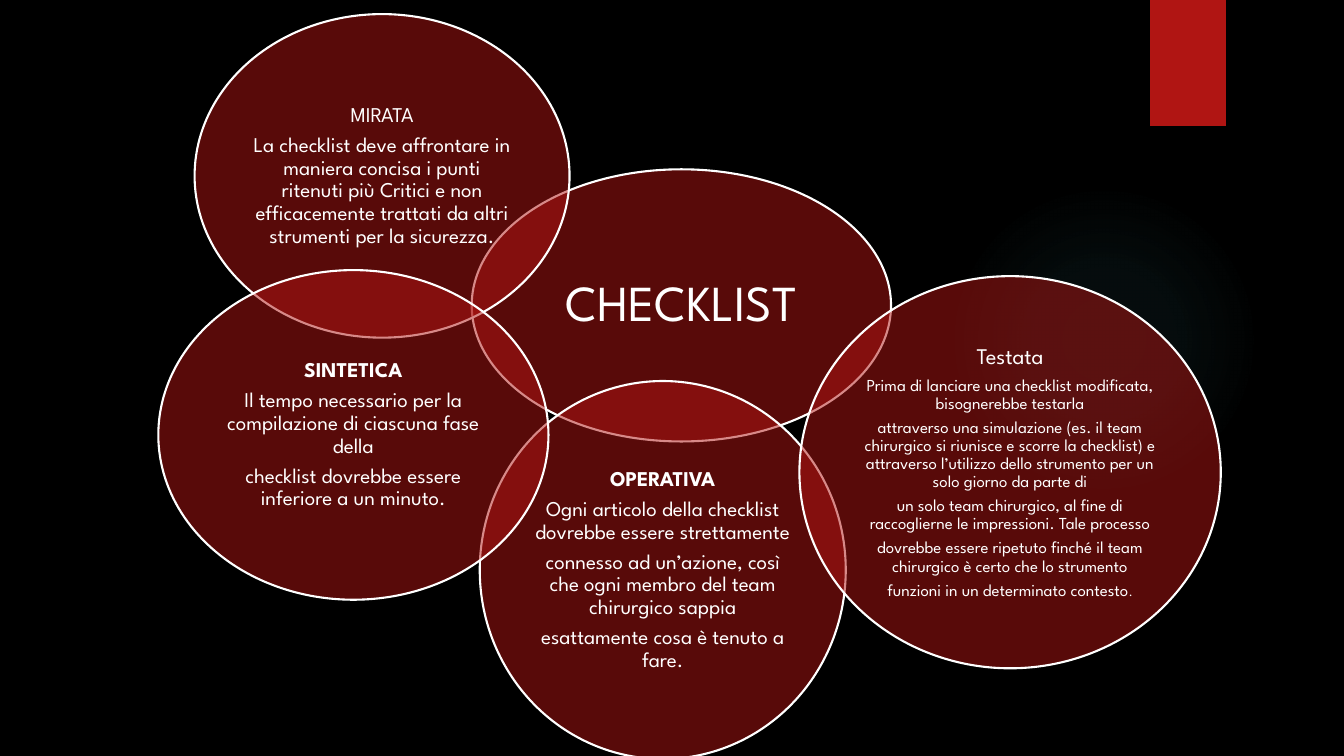
import dataclasses

import lxml.etree
import pptx
import pptx.dml.color
import pptx.enum.shapes
import pptx.enum.text
import pptx.oxml.ns
import pptx.util


@dataclasses.dataclass(frozen=True)
class Theme:
    font: str = "League Spartan"
    background: str = "000000"
    accent: str = "B01513"
    glow: str = "50B9C1"
    ink: str = "FFFFFF"
    title: float = 36
    body: float = 15
    heading: float = 16
    small: float = 12
    tiny: float = 9
    spacer: float = 22


THEME = Theme()
OVAL = pptx.enum.shapes.MSO_SHAPE.OVAL
RECTANGLE = pptx.enum.shapes.MSO_SHAPE.RECTANGLE
GLOW_STOPS = [(0, 7), (36, 6), (69, 0)]

GLOW_BOX = (70.58, 24.4, 23.1, 41.07)
TAB_BOX = (85.58, 0, 5.63, 16.67)

CIRCLES = [
    ((35.1, 22.4, 31.2, 36), [
        [("CHECKLIST", THEME.title, False)],
    ]),
    ((14.48, 1.87, 27.9, 42.8), [
        [("MIRATA", THEME.body, False)],
        [("La checklist deve affrontare in maniera concisa i punti ritenuti più Critici "
          "e non efficacemente trattati da altri strumenti per la sicurezza.", THEME.body, False)],
    ]),
    ((35.7, 50.4, 27.23, 50), [
        [("OPERATIVA", THEME.body, True)],
        [("Ogni articolo della checklist dovrebbe essere strettamente", THEME.body, False)],
        [("connesso ad un’azione, così che ogni membro del team chirurgico sappia",
          THEME.body, False)],
        [("esattamente cosa è tenuto a fare.", THEME.body, False)],
    ]),
    ((59.48, 36.53, 31.35, 51.87), [
        [("Testata", THEME.heading, False)],
        [("Prima di lanciare una checklist modificata, bisognerebbe testarla",
          THEME.small, False)],
        [("attraverso una simulazione (es. il team chirurgico si riunisce e scorre la checklist) "
          "e attraverso l’utilizzo dello strumento per un solo giorno da parte di",
          THEME.small, False)],
        [("un solo team chirurgico, al fine di raccoglierne le impressioni. Tale processo",
          THEME.small, False)],
        [("dovrebbe essere ripetuto finché il team chirurgico è certo che lo strumento",
          THEME.small, False)],
        [("funzioni in un determinato contesto", THEME.small, False), (".", THEME.tiny, False)],
    ]),
    ((11.78, 35.73, 29.03, 43.6), [
        [("SINTETICA", THEME.body, True)],
        [("Il tempo necessario per la compilazione di ciascuna fase della", THEME.body, False)],
        [("checklist dovrebbe essere inferiore a un minuto.", THEME.body, False)],
    ]),
]


def color(value):
    return pptx.dml.color.RGBColor.from_string(value)


def apply(target, values):
    for name, value in values.items():
        setattr(target, name, value)


def add_node(parent, tag, **attributes):
    return lxml.etree.SubElement(parent, pptx.oxml.ns.qn(tag), attributes)


def set_alpha(node, percent):
    add_node(node, "a:alpha", val=str(percent * 1000))


def add_shape(page, area, kind, box):
    width, height = area
    left, top, across, down = box
    shape = page.shapes.add_shape(
        kind, int(width * left / 100), int(height * top / 100),
        int(width * across / 100), int(height * down / 100))
    shape.shadow.inherit = False
    shape.fill.solid()
    shape.fill.fore_color.rgb = color(THEME.accent)
    shape.line.fill.background()
    return shape


def add_glow(page, area, box):
    shape = add_shape(page, area, OVAL, box)
    solid = shape.element.spPr.find(pptx.oxml.ns.qn("a:solidFill"))
    gradient = lxml.etree.Element(pptx.oxml.ns.qn("a:gradFill"), rotWithShape="1")
    stops = add_node(gradient, "a:gsLst")
    for position, alpha in GLOW_STOPS:
        stop = add_node(stops, "a:gs", pos=str(position * 1000))
        set_alpha(add_node(stop, "a:srgbClr", val=THEME.glow), alpha)
    circle = add_node(gradient, "a:path", path="circle")
    add_node(circle, "a:fillToRect", l="50000", t="50000", r="50000", b="50000")
    solid.getparent().replace(solid, gradient)


def add_circle(page, area, box, paragraphs):
    shape = add_shape(page, area, OVAL, box)
    fill = shape.element.spPr.find(pptx.oxml.ns.qn("a:solidFill"))
    set_alpha(fill[0], 50)
    shape.line.color.rgb = color(THEME.ink)
    shape.line.width = pptx.util.Pt(1.5)
    frame = shape.text_frame
    margin = pptx.util.Inches(0.02)
    apply(frame, {
        "word_wrap": True,
        "vertical_anchor": pptx.enum.text.MSO_ANCHOR.MIDDLE,
        "margin_left": margin, "margin_right": margin,
        "margin_top": margin, "margin_bottom": margin,
    })
    for index, spans in enumerate(paragraphs):
        para = frame.add_paragraph() if index else frame.paragraphs[0]
        last = index == len(paragraphs) - 1
        apply(para, {
            "alignment": pptx.enum.text.PP_ALIGN.CENTER,
            "line_spacing": 0.9,
            "space_after": pptx.util.Pt(0 if last else round(0.35 * spans[0][1], 2)),
        })
        for text, size, bold in spans:
            span = para.add_run()
            span.text = text
            apply(span.font, {"name": THEME.font, "size": pptx.util.Pt(size), "bold": bold})
            span.font.color.rgb = color(THEME.ink)


def build_checklist_page(deck):
    page = deck.slides.add_slide(deck.slide_layouts[6])
    page.background.fill.solid()
    page.background.fill.fore_color.rgb = color(THEME.background)
    area = (deck.slide_width, deck.slide_height)
    add_glow(page, area, GLOW_BOX)
    add_shape(page, area, RECTANGLE, TAB_BOX)
    for box, paragraphs in CIRCLES:
        add_circle(page, area, box, paragraphs)


def main():
    deck = pptx.Presentation()
    deck.slide_width = pptx.util.Inches(13.33)
    deck.slide_height = pptx.util.Inches(7.5)
    build_checklist_page(deck)
    deck.save("out.pptx")


if __name__ == "__main__":
    main()
